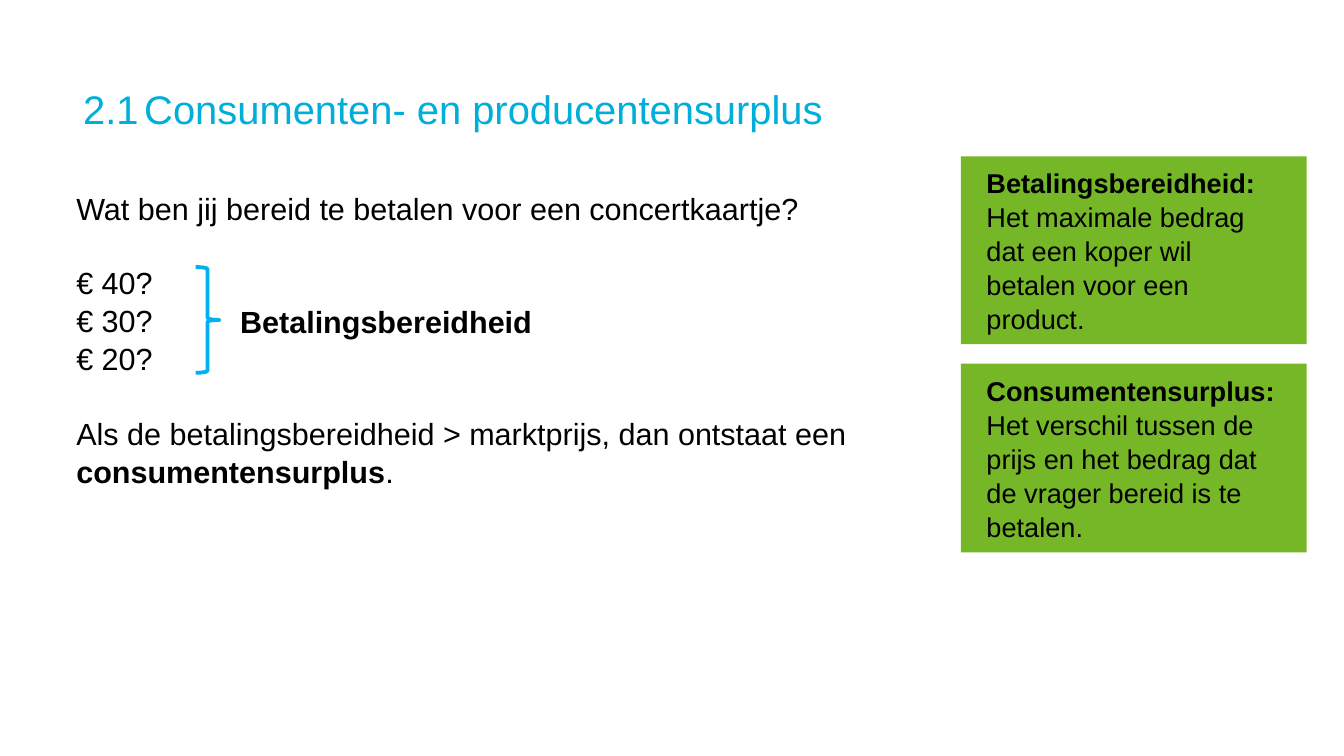
from dataclasses import dataclass

from lxml import etree
from pptx import Presentation
from pptx.dml.color import RGBColor
from pptx.enum.shapes import MSO_SHAPE
from pptx.enum.text import MSO_ANCHOR
from pptx.oxml.ns import qn
from pptx.slide import Slide
from pptx.util import Emu, Pt

RECT, BRACE = MSO_SHAPE.RECTANGLE, MSO_SHAPE.RIGHT_BRACE
TOP, MIDDLE = MSO_ANCHOR.TOP, MSO_ANCHOR.MIDDLE
PX = 9144  # 100 px to the inch
FONT = "Arial"
LEAD = 1.04
COLORS = {"title": "00AEDA", "text": "000000", "card": "76B728", "brace": "00B0F0"}

Run = tuple[str, bool]


@dataclass
class Block:
    box: tuple[int, int, int, int]
    lines: list[list[Run]]
    size: int = 36
    color: str = "text"
    fill: str = ""
    inset: tuple[int, int] = (10, 5)
    anchor: MSO_ANCHOR = TOP
    gap: int = 0  # points above the second line
    tab: int = 0


def card(top: int, high: int, term: str, text: str) -> Block:
    return Block((1572, top, 566, high), [[(term, True)], [(text, False)]],
                 size=32, fill="card", inset=(42, 42), anchor=MIDDLE)


BLOCKS = [
    Block((136, 136, 1925, 91), [[("2.1\tConsumenten- en producentensurplus", False)]],
          size=47, color="title", inset=(0, 0), tab=100),
    card(256, 307, "Betalingsbereidheid:",
         "Het maximale bedrag dat een koper wil betalen voor een product."),
    card(595, 309, "Consumentensurplus:",
         "Het verschil tussen de prijs en het bedrag dat de vrager bereid is te betalen."),
    Block((115, 303, 1473, 313),
          [[("Wat ben jij bereid te betalen voor een concertkaartje?", False)],
           *[[(f"€ {price}?", False)] for price in (40, 30, 20)]], gap=43),
    Block((383, 488, 654, 71), [[("Betalingsbereidheid", True)]]),
    Block((115, 671, 1473, 131),
          [[("Als de betalingsbereidheid > marktprijs, dan ontstaat een ", False),
            ("consumentensurplus", True), (".", False)]]),
]


def rgb(name: str) -> RGBColor:
    return RGBColor.from_string(COLORS[name])


def scale(box: tuple[int, ...]) -> list[Emu]:
    return [Emu(side * PX) for side in box]


def draw_block(slide: Slide, block: Block) -> None:
    if block.fill:
        shape = slide.shapes.add_shape(RECT, *scale(block.box))
        shape.shadow.inherit = False
        shape.fill.solid()
        shape.fill.fore_color.rgb = rgb(block.fill)
        shape.line.fill.background()
    else:
        shape = slide.shapes.add_textbox(*scale(block.box))
    frame = shape.text_frame
    side, edge = scale(block.inset)
    form = {"word_wrap": True, "vertical_anchor": block.anchor,
            "margin_left": side, "margin_right": side,
            "margin_top": edge, "margin_bottom": edge}
    for name, value in form.items():
        setattr(frame, name, value)

    for index, line in enumerate(block.lines):
        para = frame.paragraphs[0] if index == 0 else frame.add_paragraph()
        para.alignment = 1  # left
        para.line_spacing = LEAD
        if index == 1 and block.gap:
            para.space_before = Pt(block.gap)
        if block.tab:
            stops = etree.SubElement(para._p.get_or_add_pPr(), qn("a:tabLst"))
            etree.SubElement(stops, qn("a:tab"), pos=str(block.tab * PX), algn="l")
        for text, bold in line:
            run = para.add_run()
            run.text = text
            for name, value in {"name": FONT, "size": Pt(block.size), "bold": bold}.items():
                setattr(run.font, name, value)
            run.font.color.rgb = rgb(block.color)


def draw_brace(slide: Slide) -> None:
    brace = slide.shapes.add_shape(BRACE, *scale((320, 437, 39, 173)))
    brace.shadow.inherit = False
    brace.fill.background()
    brace.line.color.rgb = rgb("brace")
    brace.line.width = Pt(4.5)


def main() -> None:
    deck = Presentation()
    deck.slide_width, deck.slide_height = scale((2199, 1237))
    slide = deck.slides.add_slide(deck.slide_layouts[6])
    # Title, definition cards and running text
    for block in BLOCKS:
        draw_block(slide, block)
    # Brace beside the prices
    draw_brace(slide)
    deck.save("out.pptx")


if __name__ == "__main__":
    main()
